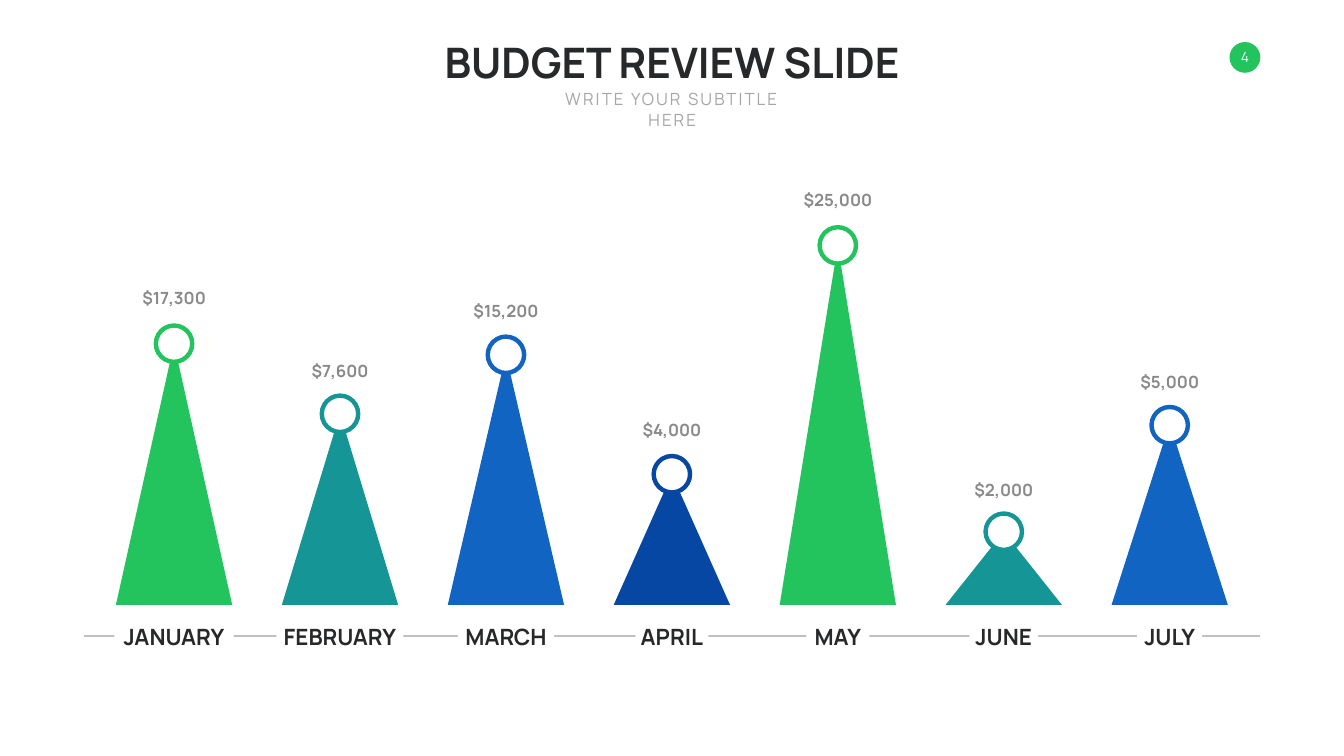
"""Build a budget review slide with one peak per month."""
from dataclasses import dataclass

from lxml import etree
from pptx import Presentation
from pptx.dml.color import RGBColor
from pptx.enum.shapes import MSO_CONNECTOR, MSO_SHAPE
from pptx.enum.text import MSO_ANCHOR, MSO_AUTO_SIZE, PP_ALIGN
from pptx.oxml.ns import qn
from pptx.util import Pt

STRAIGHT = MSO_CONNECTOR.STRAIGHT
OVAL, RECTANGLE, TRIANGLE = MSO_SHAPE.OVAL, MSO_SHAPE.RECTANGLE, MSO_SHAPE.ISOSCELES_TRIANGLE
TOP, MIDDLE = MSO_ANCHOR.TOP, MSO_ANCHOR.MIDDLE
NO_FIT = MSO_AUTO_SIZE.NONE
CENTER = PP_ALIGN.CENTER


@dataclass(frozen=True)
class Theme:
    font: str = "Manrope"
    ink: str = "272829"
    muted: str = "A6A6A6"
    amount: str = "898989"
    axis: str = "BFBFBF"
    white: str = "FFFFFF"
    green: str = "23C35E"
    teal: str = "159596"
    blue: str = "1264C3"
    navy: str = "0547A3"
    title_size: int = 60
    month_size: int = 32
    text_size: int = 24
    number_size: int = 20


@dataclass(frozen=True)
class Month:
    name: str
    label_width: float
    amount: str
    amount_top: float
    apex: float
    ring_center: float
    color: str


THEME = Theme()
SLIDE_WIDTH, SLIDE_HEIGHT = 1919.52, 1080
FIRST_CENTER, PITCH = 248.6, 237
BASELINE, PEAK_WIDTH = 864, 166
RING_SIZE, RING_LINE = 52, 6.3
AXIS_LEFT, AXIS_RIGHT, AXIS_Y = 119.5, 1800, 908.6
MONTH_TOP, MONTH_HEIGHT = 887, 46
AMOUNT_WIDTH, AMOUNT_HEIGHT = 115, 36

MONTHS = [
    Month("JANUARY", 170.6, "$17,300", 407.5, 491, 491, THEME.green),
    Month("FEBRUARY", 181.4, "$7,600", 512, 590.4, 591.2, THEME.teal),
    Month("MARCH", 137.5, "$15,200", 425.5, 506.9, 506.9, THEME.blue),
    Month("APRIL", 104.4, "$4,000", 595.4, 677.5, 677.5, THEME.navy),
    Month("MAY", 90, "$25,000", 267.8, 350.6, 350.6, THEME.green),
    Month("JUNE", 97.9, "$2,000", 681.1, 759.6, 759.6, THEME.teal),
    Month("JULY", 92.9, "$5,000", 527, 604.8, 607.4, THEME.blue),
]


class SlideBuilder:
    """Hold the theme and the current slide, and draw each kind of element."""

    def __init__(self, slide, theme):
        self.slide = slide
        self.theme = theme

    def set_text(self, holder, wording, size, color, bold=False, anchor=MIDDLE,
                 wrap=False, spacing=0):
        frame = holder.text_frame
        frame.text = wording
        frame.auto_size = NO_FIT
        frame.word_wrap = wrap
        frame.vertical_anchor = anchor
        paragraph = frame.paragraphs[0]
        paragraph.alignment = CENTER
        paragraph.space_before = Pt(0)
        run = paragraph.runs[0]
        run.font.name = self.theme.font
        run.font.size = Pt(size)
        run.font.bold = bold
        run.font.color.rgb = RGBColor.from_string(color)
        if spacing:
            run.font._element.set("spc", str(spacing * 100))

    def heading(self, index, wording, left, top, width, height, **style):
        holder = self.slide.placeholders[index]
        holder.left, holder.top = Pt(left), Pt(top)
        holder.width, holder.height = Pt(width), Pt(height)
        self.set_text(holder, wording, anchor=TOP, **style)

    def shape(self, shapes, preset, left, top, width, height, fill, outline=None):
        figure = shapes.add_shape(preset, Pt(left), Pt(top), Pt(width), Pt(height))
        figure.shadow.inherit = False
        figure.fill.solid()
        figure.fill.fore_color.rgb = RGBColor.from_string(fill)
        if outline:
            figure.line.color.rgb = RGBColor.from_string(outline)
            figure.line.width = Pt(RING_LINE)
        else:
            figure.line.fill.background()
        return figure

    def axis(self):
        axis = self.slide.shapes.add_connector(
            STRAIGHT, Pt(AXIS_LEFT), Pt(AXIS_Y), Pt(AXIS_RIGHT), Pt(AXIS_Y))
        axis.line.color.rgb = RGBColor.from_string(self.theme.axis)
        axis.line.width = Pt(3)
        etree.SubElement(axis._element.spPr, qn("a:effectLst"))

    def page_number(self, number):
        badge = self.shape(self.slide.shapes, OVAL, 1756, 60, 44, 44, self.theme.green)
        frame = badge.text_frame
        frame.margin_left = frame.margin_right = frame.margin_top = frame.margin_bottom = 0
        self.set_text(badge, number, self.theme.number_size, self.theme.white)

    def peak(self, center, month):
        shapes = self.slide.shapes.add_group_shape().shapes
        self.shape(shapes, TRIANGLE, center - PEAK_WIDTH / 2, month.apex,
                   PEAK_WIDTH, BASELINE - month.apex, month.color)
        self.shape(shapes, OVAL, center - RING_SIZE / 2, month.ring_center - RING_SIZE / 2,
                   RING_SIZE, RING_SIZE, self.theme.white, month.color)

    def month_label(self, center, month):
        label = self.shape(self.slide.shapes, RECTANGLE, center - month.label_width / 2,
                           MONTH_TOP, month.label_width, MONTH_HEIGHT, self.theme.white)
        self.set_text(label, month.name, self.theme.month_size, self.theme.ink, bold=True)

    def amount_label(self, center, month):
        label = self.slide.shapes.add_textbox(
            Pt(center - AMOUNT_WIDTH / 2), Pt(month.amount_top),
            Pt(AMOUNT_WIDTH), Pt(AMOUNT_HEIGHT))
        self.set_text(label, month.amount, self.theme.text_size, self.theme.amount, bold=True)


def main():
    presentation = Presentation()
    presentation.slide_width = Pt(SLIDE_WIDTH)
    presentation.slide_height = Pt(SLIDE_HEIGHT)
    slide = presentation.slides.add_slide(presentation.slide_layouts[0])
    builder = SlideBuilder(slide, THEME)

    builder.heading(0, "BUDGET REVIEW SLIDE", 616.3, 48.2, 687, 80,
                    size=THEME.title_size, color=THEME.ink, bold=True)
    builder.heading(1, "WRITE YOUR SUBTITLE HERE", 764.6, 123.8, 391, 36,
                    size=THEME.text_size, color=THEME.muted, wrap=True, spacing=3)
    builder.page_number("4")
    builder.axis()
    for column, month in enumerate(MONTHS):
        center = FIRST_CENTER + column * PITCH
        builder.peak(center, month)
        builder.month_label(center, month)
        builder.amount_label(center, month)

    presentation.save("out.pptx")


if __name__ == "__main__":
    main()
